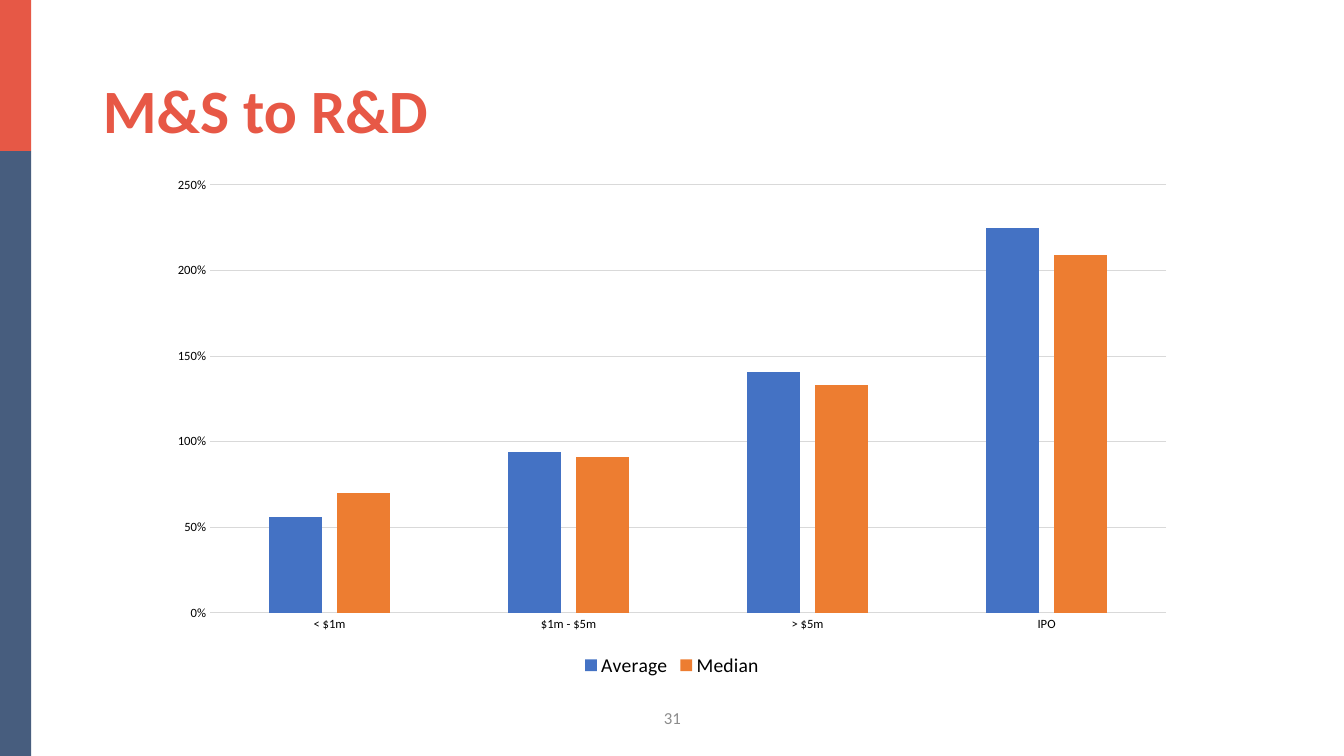
from dataclasses import dataclass

from pptx import Presentation
from pptx.chart.data import CategoryChartData
from pptx.dml.color import RGBColor
from pptx.enum.chart import XL_CHART_TYPE, XL_LEGEND_POSITION, XL_TICK_MARK
from pptx.enum.shapes import MSO_SHAPE
from pptx.enum.text import MSO_ANCHOR, PP_ALIGN
from pptx.util import Inches, Pt

CLUSTERED = XL_CHART_TYPE.COLUMN_CLUSTERED
BOTTOM = XL_LEGEND_POSITION.BOTTOM
NO_TICK = XL_TICK_MARK.NONE
RECTANGLE = MSO_SHAPE.RECTANGLE
MIDDLE = MSO_ANCHOR.MIDDLE
LEFT, CENTER = PP_ALIGN.LEFT, PP_ALIGN.CENTER

FONT = "Calibri"
BLACK, GRID_GREY = "000000", "D9D9D9"
TITLE_ONLY = 5


@dataclass(frozen=True)
class Band:
    top: float
    height: float
    color: str


@dataclass(frozen=True)
class Ratio:
    name: str
    values: tuple[float, ...]
    color: str


SIDE_BANDS = (Band(0, 1.5, "E65846"), Band(1.5, 6, "475D7E"))
STAGES = ("< $1m", "$1m - $5m", "> $5m", "IPO")
RATIOS = (
    Ratio("Average", (0.56, 0.94, 1.41, 2.25), "4472C4"),
    Ratio("Median", (0.7, 0.91, 1.33, 2.09), "ED7D31"),
)


def rgb(color: str) -> RGBColor:
    return RGBColor.from_string(color)


def style_font(font, size: float, color: str, bold: bool = False) -> None:
    font.name = FONT
    font.size = Pt(size)
    font.bold = bold
    font.color.rgb = rgb(color)


def style_line(line, color: str) -> None:
    line.width = Pt(0.75)
    line.color.rgb = rgb(color)


def add_band(slide, band: Band) -> None:
    strip = slide.shapes.add_shape(
        RECTANGLE, 0, Inches(band.top), Inches(0.31), Inches(band.height))
    strip.shadow.inherit = False
    strip.fill.solid()
    strip.fill.fore_color.rgb = rgb(band.color)
    strip.line.fill.background()


def set_title(slide, text: str) -> None:
    title = slide.shapes.title
    title.left, title.top = Inches(0.92), Inches(0.4)
    title.width, title.height = Inches(11.5), Inches(1.45)
    title.text_frame.text = text
    title.text_frame.vertical_anchor = MIDDLE
    heading = title.text_frame.paragraphs[0]
    heading.alignment = LEFT
    heading.line_spacing = 0.9
    style_font(heading.font, 44, "E75846", bold=True)


def add_page_number(slide, number: int) -> None:
    box = slide.shapes.add_textbox(
        Inches(5.17), Inches(6.92), Inches(3), Inches(0.4))
    frame = box.text_frame
    frame.word_wrap = True
    frame.vertical_anchor = MIDDLE
    frame.text = str(number)
    frame.paragraphs[0].alignment = CENTER
    style_font(frame.paragraphs[0].font, 12, "8C8C8C")


def add_ratio_chart(slide) -> None:
    data = CategoryChartData(number_format="0%")
    data.categories = STAGES
    for ratio in RATIOS:
        data.add_series(ratio.name, ratio.values)
    chart = slide.shapes.add_chart(
        CLUSTERED, Inches(1.56), Inches(1.66), Inches(10.21), Inches(5.1),
        data).chart
    style_font(chart.font, 10, BLACK)
    chart.has_title = False
    chart.has_legend = True
    chart.legend.position = BOTTOM
    chart.legend.include_in_layout = False
    style_font(chart.legend.font, 14, BLACK)

    plot = chart.plots[0]
    plot.vary_by_categories = False
    plot.gap_width = 219
    plot.overlap = -27
    for series, ratio in zip(plot.series, RATIOS):
        series.invert_if_negative = False
        series.format.fill.solid()
        series.format.fill.fore_color.rgb = rgb(ratio.color)

    stages, percent = chart.category_axis, chart.value_axis
    for axis in (stages, percent):
        axis.major_tick_mark = axis.minor_tick_mark = NO_TICK
        style_font(axis.tick_labels.font, 9, BLACK)
    style_line(stages.format.line, GRID_GREY)
    percent.format.line.fill.background()
    percent.minimum_scale, percent.maximum_scale = 0, 2.5
    percent.major_unit = 0.5
    percent.tick_labels.number_format = "0%"
    percent.tick_labels.number_format_is_linked = False
    style_line(percent.major_gridlines.format.line, GRID_GREY)


def main() -> None:
    deck = Presentation()
    deck.slide_width, deck.slide_height = Inches(13.33), Inches(7.5)
    slide = deck.slides.add_slide(deck.slide_layouts[TITLE_ONLY])
    for band in SIDE_BANDS:
        add_band(slide, band)
    set_title(slide, "M&S to R&D")
    add_page_number(slide, 31)
    add_ratio_chart(slide)
    deck.save("out.pptx")


if __name__ == "__main__":
    main()
